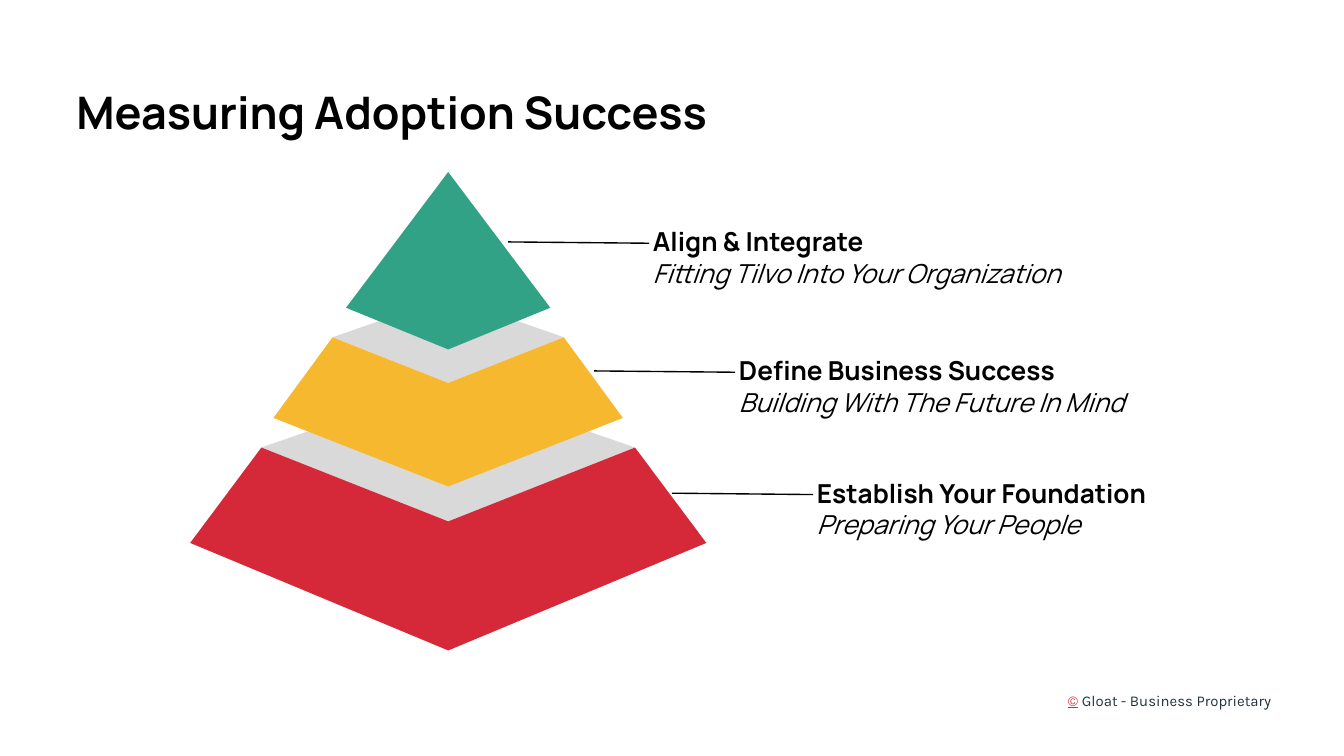
import pptx
import pptx.dml.color
import pptx.enum.shapes
import pptx.enum.text
import pptx.oxml
import pptx.util
from pptx.util import Inches

RGBColor = pptx.dml.color.RGBColor
BLACK = RGBColor(0x00, 0x00, 0x00)
SLATE = RGBColor(0x22, 0x33, 0x3B)
RED = RGBColor(0xD5, 0x28, 0x39)
YELLOW = RGBColor(0xF5, 0xB8, 0x2E)
GREEN = RGBColor(0x32, 0xA2, 0x87)
GREY = RGBColor(0xD9, 0xD9, 0xD9)

TIERS = [
    (RED, 1.39, 1.92, 1.57, 2.05, 2.6, 2.76, 3.56),
    (YELLOW, 0.86, 1.3, 0.93, 1.23, 1.57, 1.83, 2.34),
    (GREEN, 0, 0.76, 0, 0, 0, 1.01, 1.32),
]
CALLOUTS = [
    (5.98, 3.45, 3.31, "Establish Your Foundation", "Preparing Your People"),
    (5.4, 2.54, 4.25, "Define Business Success", "Building With The Future In Mind"),
    (4.76, 1.58, 4.22, "Align & Integrate", "Fitting Tilvo Into Your Organization"),
]


def add_text_box(page, left, top, width, height):
    """Add a wrapping text box with even insets and return its frame."""
    box = page.shapes.add_textbox(Inches(left), Inches(top), Inches(width), Inches(height))
    frame = box.text_frame
    frame.word_wrap = True
    frame.margin_left = frame.margin_right = Inches(0.1)
    frame.margin_top = frame.margin_bottom = Inches(0.1)
    return frame


def add_span(para, text, size, color, face="Manrope", bold=False, italic=False, underline=False):
    """Add one formatted run to a paragraph."""
    span = para.add_run()
    span.text = text
    font = span.font
    font.name, font.size, font.color.rgb = face, pptx.util.Pt(size), color
    font.bold, font.italic, font.underline = bold, italic, underline


def add_face(group, points, color):
    """Add one filled polygon without outline to a group."""
    corners = [(Inches(x), Inches(y)) for x, y in points]
    builder = group.shapes.build_freeform(*corners[0])
    builder.add_line_segments(corners[1:], close=True)
    face = builder.convert_to_shape()
    face.shadow.inherit = False
    face.fill.solid()
    face.fill.fore_color.rgb = color
    face.line.fill.background()


def draw_pyramid(page, left, top, width):
    """Draw the tiers from the base up, each with a lid and two mirrored faces."""
    group = page.shapes.add_group_shape()
    middle = left + width / 2
    for color, upper, lower, back, shoulder, notch, foot, tip in TIERS:
        if upper:
            lid = [(-upper, shoulder), (0, notch), (upper, shoulder), (0, back)]
            add_face(group, [(middle + x, top + y) for x, y in lid], GREY)
        half = [(upper, shoulder), (lower, foot), (0, tip), (0, notch)]
        for side in (-1, 1):
            add_face(group, [(middle + side * x, top + y) for x, y in half], color)


def draw_callout(page, left, top, width, heading, detail):
    """Draw a heading with its detail and the leader line to the pyramid."""
    para = add_text_box(page, left, top, width, 0.4).paragraphs[0]
    add_span(para, heading, 14, BLACK, bold=True)
    para.add_line_break()
    add_span(para, detail, 14, BLACK, italic=True)
    leader = page.shapes.add_connector(
        pptx.enum.shapes.MSO_CONNECTOR.STRAIGHT,
        Inches(left + 0.07), Inches(top + 0.23), Inches(left - 0.98), Inches(top + 0.22))
    leader.line.color.rgb = BLACK
    leader.line.width = pptx.util.Pt(0.75)
    properties = leader._element.spPr
    properties.append(pptx.oxml.parse_xml(
        '<a:effectLst xmlns:a="http://schemas.openxmlformats.org/drawingml/2006/main"/>'))


def draw_title(page, left, top, width, height):
    """Draw the slide title."""
    frame = add_text_box(page, left, top, width, height)
    frame.vertical_anchor = pptx.enum.text.MSO_ANCHOR.MIDDLE
    add_span(frame.paragraphs[0], "Measuring Adoption Success", 24, BLACK, bold=True)


def draw_footer(page, left, top, width, height):
    """Draw the right-aligned copyright line."""
    frame = add_text_box(page, left, top, width, height)
    frame.auto_size = pptx.enum.text.MSO_AUTO_SIZE.SHAPE_TO_FIT_TEXT
    para = frame.paragraphs[0]
    para.alignment = pptx.enum.text.PP_ALIGN.RIGHT
    add_span(para, "©", 8, RED, face="Karla", underline=True)
    add_span(para, " Gloat - Business Proprietary", 8, SLATE, face="Karla")


def main():
    """Build the slide and save it."""
    deck = pptx.Presentation()
    deck.slide_width = Inches(10)
    deck.slide_height = deck.slide_width * 9 // 16
    page = deck.slides.add_slide(deck.slide_layouts[6])
    draw_footer(page, 7.73, 5.08, 1.83, 0.34)
    draw_pyramid(page, 1.41, 1.28, 3.85)
    for callout in CALLOUTS:
        draw_callout(page, *callout)
    draw_title(page, 0.47, 0.55, 9.06, 0.56)
    deck.save("out.pptx")


if __name__ == "__main__":
    main()
